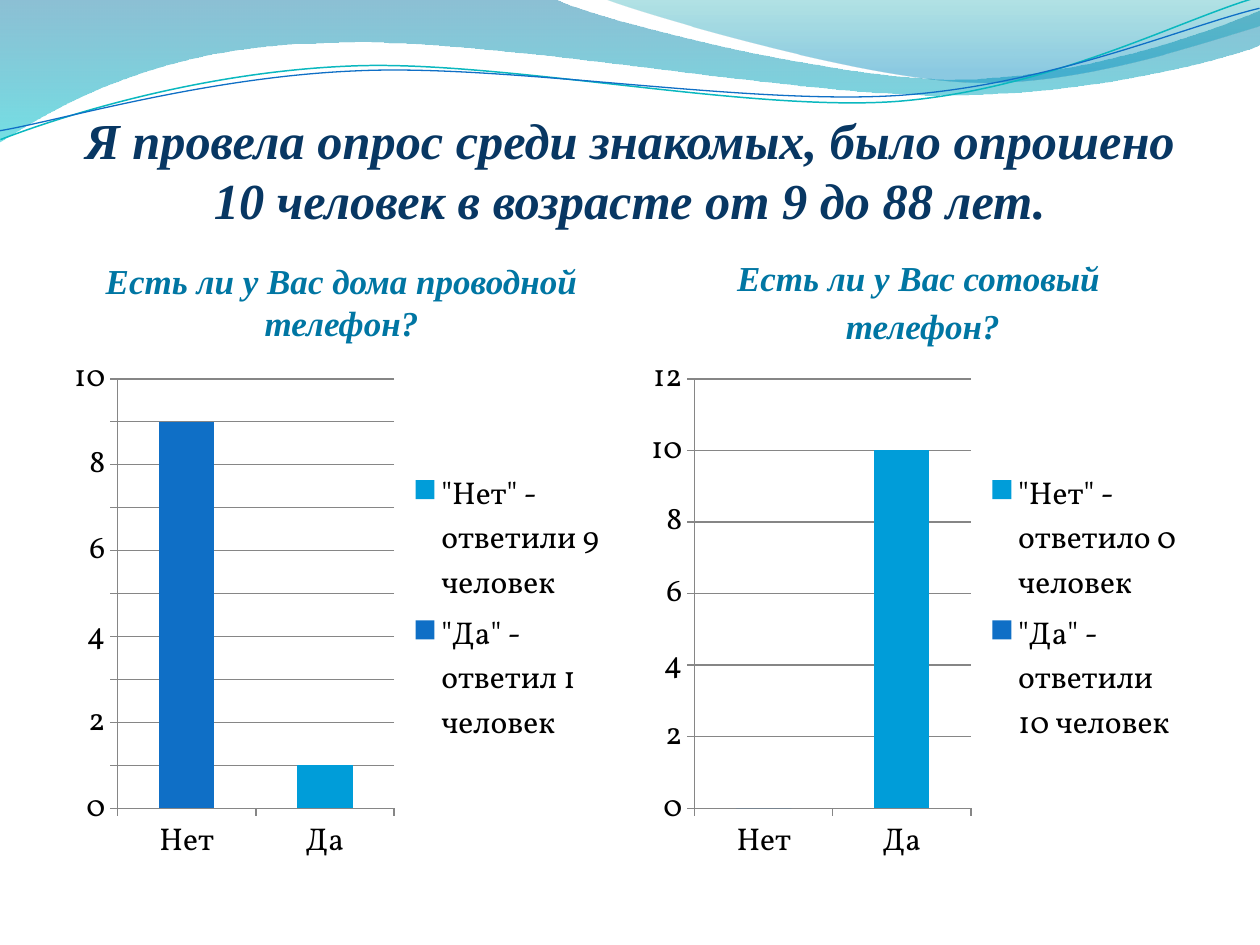
from lxml.etree import SubElement
from pptx import Presentation
from pptx.chart.data import CategoryChartData
from pptx.dml.color import RGBColor
from pptx.enum.chart import XL_CHART_TYPE as ChartType, XL_LEGEND_POSITION as LegendPosition
from pptx.enum.chart import XL_TICK_MARK as TickMark
from pptx.enum.text import MSO_ANCHOR as Anchor, PP_ALIGN as Align
from pptx.oxml.ns import qn
from pptx.util import Pt

PX = 914400 / 126

NAVY = RGBColor(0x08, 0x37, 0x63)
TEAL = RGBColor(0x00, 0x76, 0xA3)
BLUE = RGBColor(0x0F, 0x6F, 0xC6)
SKY = RGBColor(0x00, 0x9D, 0xD9)
AQUA = RGBColor(0x0A, 0xB8, 0xBF)
BLACK = RGBColor(0, 0, 0)
GRAY = RGBColor(0x86, 0x86, 0x86)
WAVE_TOP = RGBColor(0x00, 0x74, 0xA1)
WAVE_BOTTOM = RGBColor(0x00, 0xC6, 0xCF)
CREST_TOP = RGBColor(0x00, 0xA1, 0xA9)
CREST_BOTTOM = RGBColor(0x00, 0x8B, 0xBF)

presentation = Presentation()
presentation.slide_width = round(1260 * PX)
presentation.slide_height = round(945 * PX)
slide = presentation.slides.add_slide(presentation.slide_layouts[6])


def add_curve(box, start, segments, close):
    """Draw straight (2 numbers) and cubic Bezier (6 numbers) segments inside box."""
    left, top, right, bottom = [round(value * PX) for value in box]
    builder = slide.shapes.build_freeform(left, top)
    builder.add_line_segments([(right, top), (right, bottom), (left, bottom)])
    shape = builder.convert_to_shape()
    shape.shadow.inherit = False
    path = next(shape._element.iter(qn("a:path")))
    for child in list(path):
        path.remove(child)
    for index, numbers in enumerate([start, *segments]):
        tag = "a:moveTo" if index == 0 else "a:lnTo" if len(numbers) == 2 else "a:cubicBezTo"
        command = SubElement(path, qn(tag))
        for x, y in zip(numbers[::2], numbers[1::2]):
            point = SubElement(command, qn("a:pt"))
            point.set("x", str(round(x * PX) - left))
            point.set("y", str(round(y * PX) - top))
    if close:
        SubElement(path, qn("a:close"))
    return shape


def add_text(box, lines, size, color, space_before, margins):
    left, top, width, height = [round(value * PX) for value in box]
    frame = slide.shapes.add_textbox(left, top, width, height).text_frame
    frame.word_wrap = True
    frame.vertical_anchor = Anchor.MIDDLE
    side, above = [round(value * PX) for value in margins]
    frame.margin_left = frame.margin_right = side
    frame.margin_top, frame.margin_bottom = above, 0
    for index, line in enumerate(lines):
        paragraph = frame.add_paragraph() if index else frame.paragraphs[0]
        paragraph.text = line
        paragraph.alignment = Align.CENTER
        paragraph.space_before = Pt(space_before)
        font = paragraph.font
        font.name, font.size, font.color.rgb = "Times New Roman", Pt(size), color
        font.bold = font.italic = True


# Header waves: box, start, segments, gradient stops (position, colour, opacity in %)
waves = [
    ((-1, -1, 1261, 142), (0, 0),
     [(554, -1), (600, 21, 837, 79, 955, 79), (1075, 79, 1207, 33, 1260, 11),
      (1261, 45), (1239, 55, 1096, 96, 940, 95), (784, 95, 481, 35, 324, 43),
      (163, 45, 58, 105, -1, 142), (0, 0)],
     [(0, WAVE_TOP, 45), (1, WAVE_BOTTOM, 55)]),
    ((604, -1, 1260, 87), (604, -1),
     [(641, 14, 859, 78, 969, 82), (1079, 87, 1211, 40, 1260, 26), (1260, 0), (604, -1)],
     [(0, CREST_TOP, 30), (0.8, CREST_BOTTOM, 45)]),
]
for box, start, segments, stops in waves:
    wave = add_curve(box, start, segments, True)
    wave.line.fill.background()
    wave.fill.gradient()
    wave.fill.gradient_angle = 270
    for stop, (position, color, _) in zip(wave.fill.gradient_stops, stops):
        stop.position = position
        stop.color.rgb = color
    for element, (_, _, opacity) in zip(wave._element.spPr.iter(qn("a:srgbClr")), stops):
        SubElement(element, qn("a:alpha")).set("val", str(opacity * 1000))

# Ribbons lie level here and are tilted afterwards
ribbons = [
    ((-2, 28, 1260, 117), (-2, 110),
     [(58, 90, 199, 52, 350, 53), (499, 53, 745, 118, 896, 114),
      (1049, 109, 1184, 45, 1260, 27)], AQUA, 0.85),
    ((-2, 38, 1262, 111), (-2, 101),
     [(57, 94, 207, 57, 357, 58), (509, 58, 750, 112, 902, 108),
      (1052, 104, 1188, 52, 1262, 38)], BLUE, 0.75),
]
for box, start, segments, color, weight in ribbons:
    ribbon = add_curve(box, start, segments, False)
    ribbon.rotation = 357.3
    ribbon.fill.background()
    ribbon.line.color.rgb = color
    ribbon.line.width = Pt(weight)

add_text((63, 97, 1134, 139),
         ["Я провела опрос среди знакомых, было опрошено 10 человек в возрасте от 9 до 88 лет."],
         28.8, NAVY, 0, (0, 6))

# Survey questions: left edge, heading, series (name, values), axis maximum and step
questions = [
    (63, ["Есть ли у Вас дома проводной телефон?"],
     [('"Да" - ответил 1 человек', (9, None)), ('"Нет" - ответили 9 человек', (None, 1))],
     10, 1),
    (640, ["Есть ли у Вас сотовый", " телефон?"],
     [('"Да" - ответили 10 человек', (0, None)), ('"Нет" - ответило 0 человек', (None, 10))],
     12, 2),
]
for left, heading, answers, maximum, unit in questions:
    add_text((left, 256, 557, 91), heading, 20, TEAL, 3.6, (6, 0))

    data = CategoryChartData()
    data.categories = ["Нет", "Да"]
    for name, values in answers:
        data.add_series(name, values)
    chart = slide.shapes.add_chart(
        ChartType.COLUMN_STACKED,
        *[round(value * PX) for value in (left, 346, 557, 530)], data).chart
    chart.has_title = False
    chart.font.name, chart.font.size, chart.font.color.rgb = "Vollkorn", Pt(18), BLACK
    chart.has_legend = True
    chart.legend.position = LegendPosition.RIGHT
    chart.legend.include_in_layout = False

    plot = chart.plots[0]
    plot.overlap, plot.gap_width, plot.vary_by_categories = 100, 150, False
    for series, color in zip(plot.series, (BLUE, SKY)):
        series.format.fill.solid()
        series.format.fill.fore_color.rgb = color

    value_axis = chart.value_axis
    value_axis.minimum_scale, value_axis.maximum_scale = 0, maximum
    value_axis.major_unit = unit
    value_axis.has_major_gridlines = True
    value_axis.major_gridlines.format.line.color.rgb = GRAY
    for axis in (chart.category_axis, value_axis):
        axis.major_tick_mark = TickMark.OUTSIDE
        axis.format.line.color.rgb = GRAY

presentation.save("out.pptx")
